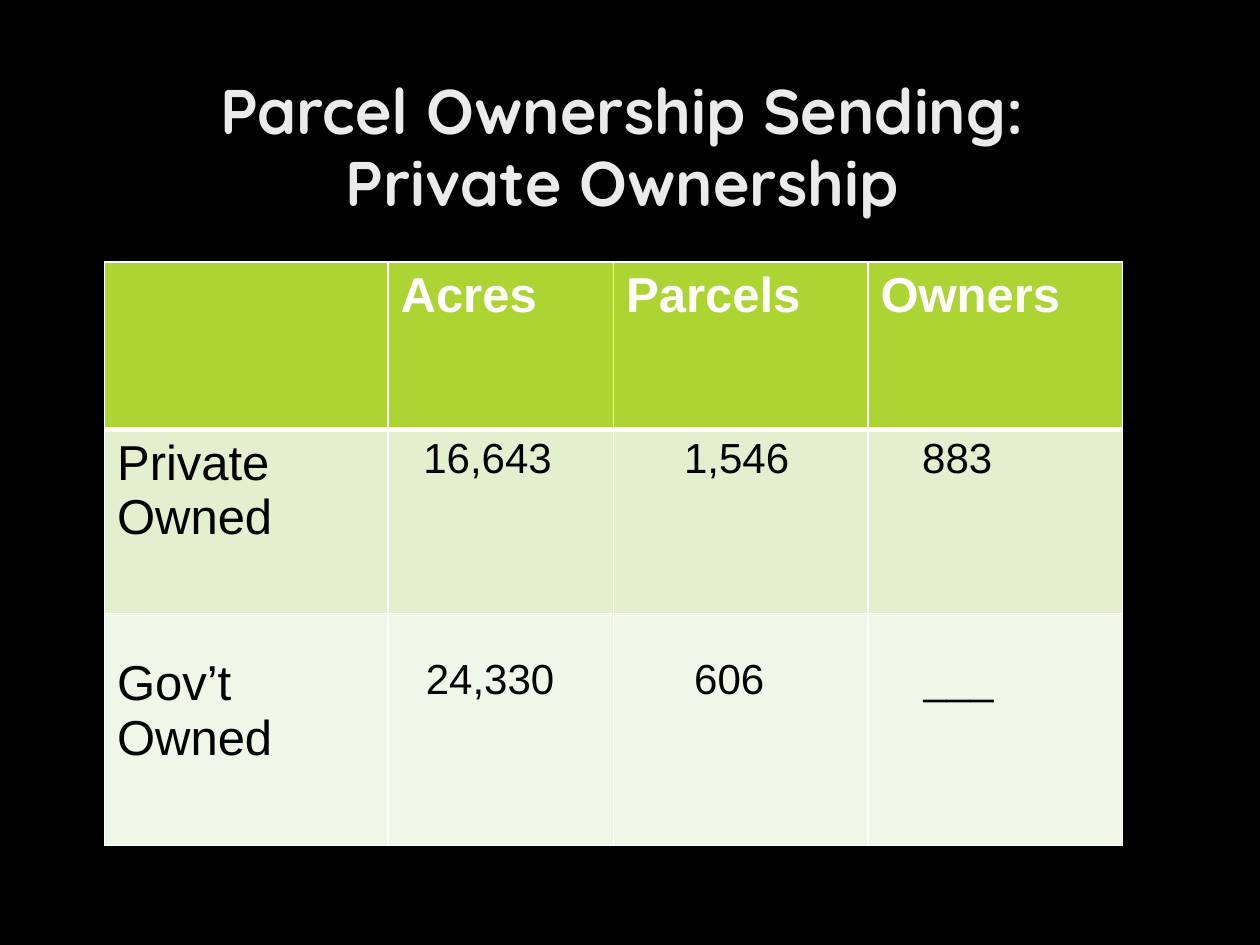
from dataclasses import dataclass

from lxml import etree
from pptx import Presentation
from pptx.dml.color import RGBColor
from pptx.enum import text as t
from pptx.oxml import ns
from pptx.util import Inches, Pt


@dataclass(frozen=True)
class Theme:
    background: str = "000000"
    title: str = "EBEBEB"
    header: str = "ACD433"
    bands: tuple = ("E3EFCE", "F1F7E8")
    light: str = "FFFFFF"
    dark: str = "000000"
    title_font: str = "Quicksand"
    table_font: str = "Arial"
    title_size: int = 36
    label_size: int = 28
    value_size: int = 24


THEME = Theme()
COLUMN_WIDTHS = (2.25, 1.79, 2.02, 2.02)
ROW_HEIGHTS = (1.33, 1.46, 1.84)
ROW_TOP_MARGINS = (0.05, 0.05, 0.34)
HEADERS = ("", "Acres", "Parcels", "Owners")
# Each row: label, then (value, indent in inches)
OWNERSHIP = (
    ("Private Owned", ("16,643", 0.18), ("1,546", 0.46), ("883", 0.33)),
    ("Gov’t Owned", ("24,330", 0.2), ("606", 0.54), ("___", 0.34)),
)


def write(paragraph, text, *, size, color, font, bold=False, indent=0,
          align=t.PP_ALIGN.LEFT):
    paragraph.alignment = align
    if indent:
        properties = paragraph._p.get_or_add_pPr()
        properties.set("marL", str(Inches(indent)))
        properties.set("indent", "0")
    run = paragraph.add_run()
    run.text = text
    run.font.size = Pt(size)
    run.font.name = font
    run.font.bold = bold
    run.font.color.rgb = RGBColor.from_string(color)


def add_title(slide):
    title = slide.shapes.title
    title.left, title.top = Inches(0), Inches(0.53)
    title.width, title.height = Inches(9.33), Inches(1.8)
    frame = title.text_frame
    frame.word_wrap = True
    frame.auto_size = t.MSO_AUTO_SIZE.NONE
    frame.vertical_anchor = t.MSO_ANCHOR.TOP
    frame.margin_top = Inches(0.08)
    lines = (("Parcel Ownership Sending:", 0.54), ("Private Ownership", 0))
    for index, (line, indent) in enumerate(lines):
        paragraph = frame.add_paragraph() if index else frame.paragraphs[0]
        paragraph.line_spacing = 0.95
        paragraph.space_before = Pt(0)
        write(paragraph, line, size=THEME.title_size, color=THEME.title,
              font=THEME.title_font, bold=True, indent=indent,
              align=t.PP_ALIGN.CENTER)


def set_borders(cell, **widths):
    """Draw the cell's sides, given as lnL, lnR, lnT and lnB in points."""
    properties = cell._tc.get_or_add_tcPr()
    for position, (side, width) in enumerate(widths.items()):
        line = etree.Element(ns.qn(f"a:{side}"), w=str(Pt(width)))
        fill = etree.SubElement(line, ns.qn("a:solidFill"))
        etree.SubElement(fill, ns.qn("a:srgbClr"), val=THEME.light)
        properties.insert(position, line)


def format_cell(cell, row):
    cell.fill.solid()
    color = THEME.bands[row - 1] if row else THEME.header
    cell.fill.fore_color.rgb = RGBColor.from_string(color)
    cell.margin_top = Inches(ROW_TOP_MARGINS[row])
    set_borders(cell, lnL=1, lnR=1, lnT=3 if row == 1 else 1,
                lnB=1 if row else 3)


def add_ownership_table(slide):
    table = slide.shapes.add_table(
        len(ROW_HEIGHTS), len(COLUMN_WIDTHS), Inches(0.83), Inches(2.08),
        Inches(sum(COLUMN_WIDTHS)), Inches(sum(ROW_HEIGHTS))).table
    table.horz_banding = False
    for column, width in zip(table.columns, COLUMN_WIDTHS):
        column.width = Inches(width)
    for row, height in zip(table.rows, ROW_HEIGHTS):
        row.height = Inches(height)

    for row, entries in enumerate((HEADERS, *OWNERSHIP)):
        for column, entry in enumerate(entries):
            cell = table.cell(row, column)
            format_cell(cell, row)
            is_value = row > 0 and column > 0
            text, indent = entry if is_value else (entry, 0)
            if text:
                write(cell.text_frame.paragraphs[0], text,
                      size=THEME.value_size if is_value else THEME.label_size,
                      color=THEME.dark if row else THEME.light,
                      font=THEME.table_font, bold=row == 0, indent=indent)


def main():
    presentation = Presentation()
    presentation.slide_width = Inches(10)
    presentation.slide_height = Inches(7.5)
    slide = presentation.slides.add_slide(presentation.slide_layouts[5])
    background = slide.background.fill
    background.solid()
    background.fore_color.rgb = RGBColor.from_string(THEME.background)
    add_title(slide)
    add_ownership_table(slide)
    presentation.save("out.pptx")


if __name__ == "__main__":
    main()
